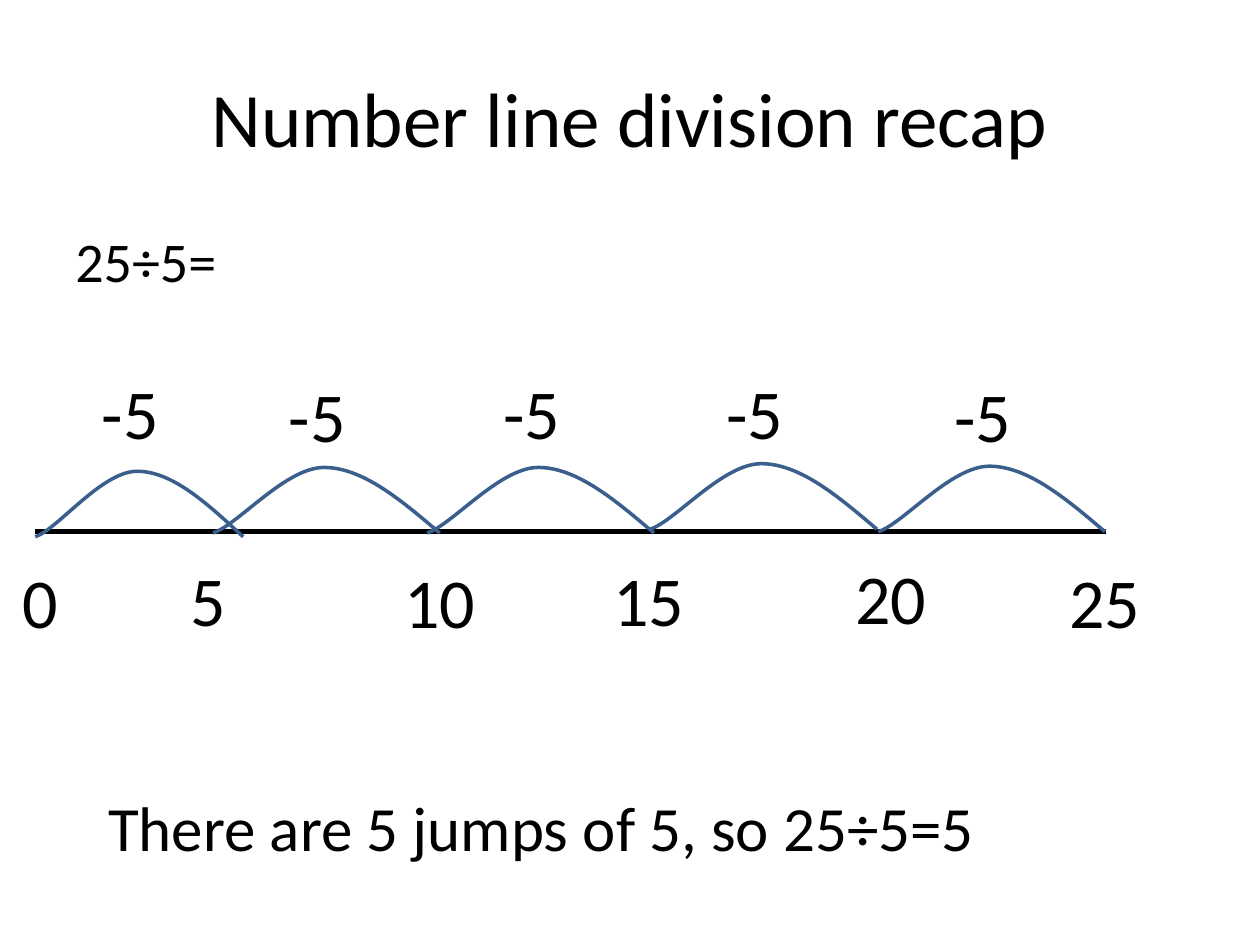
import dataclasses

import lxml.etree
import pptx
import pptx.dml.color
import pptx.enum.shapes
import pptx.enum.text
import pptx.oxml.ns
import pptx.util

ANCHOR = pptx.enum.text.MSO_ANCHOR
ALIGN = pptx.enum.text.PP_ALIGN
FIT = pptx.enum.text.MSO_AUTO_SIZE
qn = pptx.oxml.ns.qn


@dataclasses.dataclass(frozen=True)
class Theme:
    font: str = "Calibri"
    ink: str = "000000"
    arc: str = "3A5F8C"
    title: int = 44
    sum: int = 32
    label: int = 40
    answer: int = 36
    axis_width: int = 3
    arc_width: int = 2


THEME = Theme()
COLUMNS, ROWS = 100, 75
CELL = pptx.util.Inches(0.1)
LABEL_W, LABEL_H = 7.9, 7.7
ARC_H = 5.2
AXIS_START, AXIS_END, AXIS_ROW = 2.8, 87.8, 42.2

# Start, three points per Bezier curve, as shares of the arc's box
ARC = [(1, 1), (0.83, 0.5), (0.66, 0), (0.49, 0), (0.32, 0), (0.11, 0.88), (0, 1)]

# Arc left, arc top, arc width, label top
JUMPS = [(2.8, 37.4, 16.5, 28.8), (16.9, 37.1, 18, 29.1), (33.9, 37.1, 18, 28.8),
         (51.6, 36.8, 18, 28.8), (69.7, 37, 18, 29.1)]

# Left, top of the numbers 0, 5, 10 ...
NUMBERS = [(0.8, 43.8), (14.1, 43.7), (31.1, 43.8),
           (47.7, 43.7), (66.9, 43.5), (83.9, 43.8)]


def grid(n):
    return pptx.util.Emu(round(n * CELL))


def color(value):
    return pptx.dml.color.RGBColor.from_string(value)


def add_text(s, text, left, top, width, height, size,
             align=ALIGN.LEFT, anchor=ANCHOR.TOP, before=0, fit=FIT.SHAPE_TO_FIT_TEXT):
    sp = s.shapes.add_textbox(*map(grid, (left, top, width, height)))
    tf = sp.text_frame
    tf.word_wrap = True
    tf.auto_size = fit
    tf.vertical_anchor = anchor
    p = tf.paragraphs[0]
    p.alignment = align
    p.space_before = pptx.util.Pt(before)
    r = p.add_run()
    r.text = text
    r.font.name = THEME.font
    r.font.size = pptx.util.Pt(size)
    r.font.color.rgb = color(THEME.ink)


def add_label(s, text, left, top):
    add_text(s, text, left, top, LABEL_W, LABEL_H, THEME.label)


def add_axis(s):
    line = s.shapes.add_connector(
        pptx.enum.shapes.MSO_CONNECTOR.STRAIGHT,
        *map(grid, (AXIS_START, AXIS_ROW, AXIS_END, AXIS_ROW)))
    line.line.color.rgb = color(THEME.ink)
    line.line.width = pptx.util.Pt(THEME.axis_width)
    lxml.etree.SubElement(line._element.spPr, qn("a:effectLst"))


def bend(sp):
    """Turn each three straight segments into one cubic Bezier curve."""
    segments = list(sp._element.iter(qn("a:lnTo")))
    for i in range(0, len(segments), 3):
        curve = lxml.etree.Element(qn("a:cubicBezTo"))
        segments[i].addprevious(curve)
        for segment in segments[i:i + 3]:
            curve.append(segment[0])
            segment.getparent().remove(segment)


def add_arc(s, left, top, width):
    points = [(grid(left + x * width), grid(top + y * ARC_H)) for x, y in ARC]
    builder = s.shapes.build_freeform(*points[0])
    builder.add_line_segments(points[1:], close=False)
    sp = builder.convert_to_shape()
    bend(sp)
    sp.shadow.inherit = False
    sp.fill.background()
    sp.line.color.rgb = color(THEME.arc)
    sp.line.width = pptx.util.Pt(THEME.arc_width)


def add_jump(s, left, top, width, label_top):
    """Draw an arc with its label centred above it."""
    add_arc(s, left, top, width)
    add_label(s, "-5", left + (width - LABEL_W) / 2, label_top)


def main():
    prs = pptx.Presentation()
    prs.slide_width, prs.slide_height = grid(COLUMNS), grid(ROWS)
    s = prs.slides.add_slide(prs.slide_layouts[6])
    add_text(s, "Number line division recap", 5, 3, 90, 12.5, THEME.title,
             align=ALIGN.CENTER, anchor=ANCHOR.MIDDLE, fit=FIT.NONE)
    add_text(s, "25÷5=", 5, 17.5, 90, 49.5, THEME.sum,
             before=0.2 * THEME.sum, fit=FIT.NONE)
    add_axis(s)
    for jump in JUMPS:
        add_jump(s, *jump)
    for i, (left, top) in enumerate(NUMBERS):
        add_label(s, str(5 * i), left, top)
    add_text(s, "There are 5 jumps of 5, so 25÷5=5", 7.6, 62.1, 77.9, 7.1, THEME.answer)
    prs.save("out.pptx")


if __name__ == "__main__":
    main()
